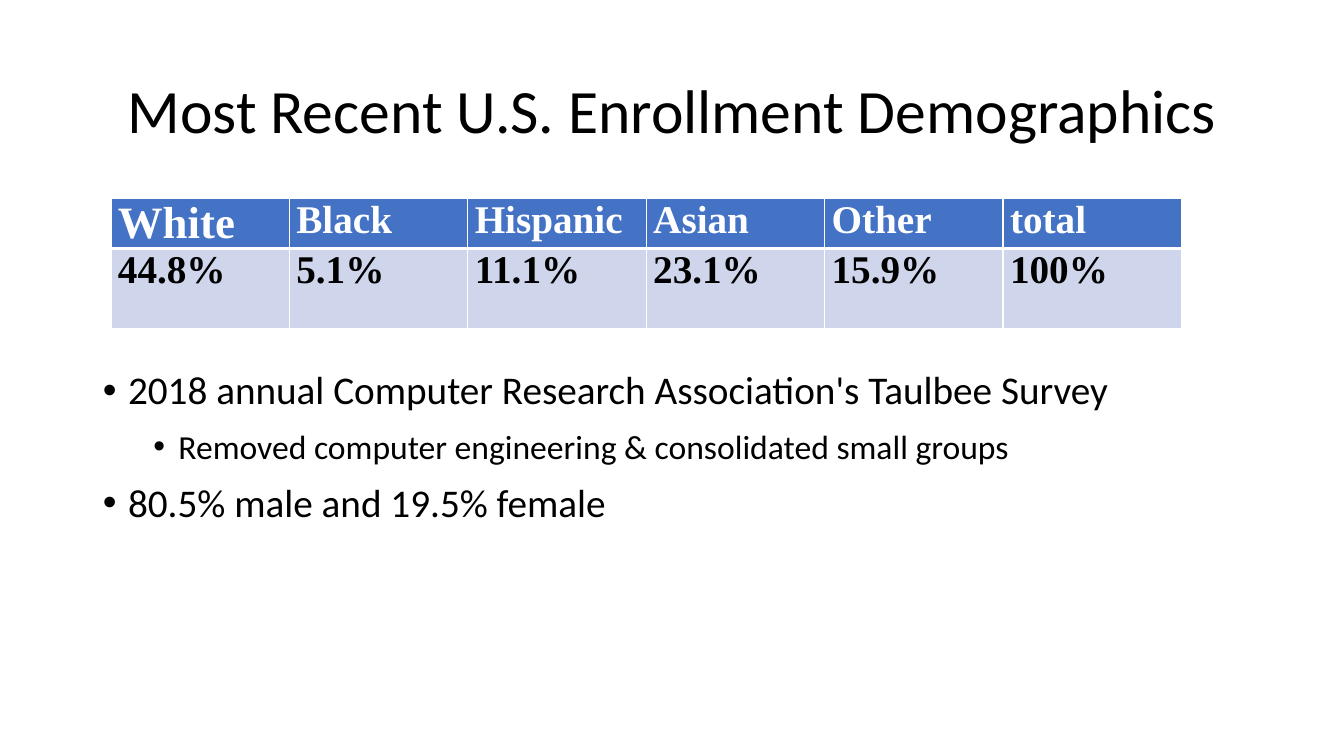
import pptx
import pptx.dml.color
import pptx.enum.text
import pptx.oxml.ns
import pptx.util
from lxml import etree

PX = 9144  # EMU per px, 100 px to the inch
BLACK = pptx.dml.color.RGBColor(0x00, 0x00, 0x00)
WHITE = pptx.dml.color.RGBColor(0xFF, 0xFF, 0xFF)
HEADER_BLUE = pptx.dml.color.RGBColor(0x44, 0x72, 0xC4)
PALE_BLUE = pptx.dml.color.RGBColor(0xCF, 0xD5, 0xEA)

HEADING = "Most Recent U.S. Enrollment Demographics"
SHARES = [("White", "44.8%"), ("Black", "5.1%"), ("Hispanic", "11.1%"),
          ("Asian", "23.1%"), ("Other", "15.9%"), ("total", "100%")]
FINDINGS = [
    (0, "2018 annual Computer Research Association's Taulbee Survey"),
    (1, "Removed computer engineering & consolidated small groups"),
    (0, "80.5% male and 19.5% female"),
]
LEVELS = [{"size": 28, "indent": 25}, {"size": 24, "indent": 75}]


def px(length):
    return pptx.util.Emu(length * PX)


def place(placeholder, **box):
    for side, length in box.items():
        setattr(placeholder, side, px(length))


def write(paragraph, text, size, color, name="Calibri", bold=False):
    run = paragraph.add_run()
    run.text = text
    run.font.color.rgb = color
    formats = {"size": pptx.util.Pt(size), "name": name, "bold": bold}
    for key, value in formats.items():
        setattr(run.font, key, value)


def add_heading(slide):
    heading = slide.shapes.title
    place(heading, left=92, top=40, width=1150, height=145)
    frame = heading.text_frame
    frame.auto_size = pptx.enum.text.MSO_AUTO_SIZE.NONE
    frame.vertical_anchor = pptx.enum.text.MSO_ANCHOR.MIDDLE
    line = frame.paragraphs[0]
    line.alignment = pptx.enum.text.PP_ALIGN.CENTER
    line.line_spacing = 0.9
    write(line, HEADING, 44, BLACK)


def add_findings(slide):
    findings = slide.placeholders[1]
    place(findings, left=92, top=185, width=1150, height=476)
    frame = findings.text_frame
    frame.auto_size = pptx.enum.text.MSO_AUTO_SIZE.NONE
    frame.margin_top = px(183)  # text starts below the table
    for index, (level, text) in enumerate(FINDINGS):
        item = frame.add_paragraph() if index else frame.paragraphs[0]
        item.level = level
        item.line_spacing = 0.9
        item.space_before = pptx.util.Pt(12 if index else 0)
        properties = item._p.get_or_add_pPr()
        properties.set("marL", str(px(LEVELS[level]["indent"])))
        properties.set("indent", str(-px(25)))
        for tag, key, value in (("a:buFont", "typeface", "Arial"), ("a:buChar", "char", "•")):
            etree.SubElement(properties, pptx.oxml.ns.qn(tag)).set(key, value)
        write(item, text, LEVELS[level]["size"], BLACK)


def add_borders(cell, **widths):
    properties = cell._tc.get_or_add_tcPr()
    for side in "LRTB":
        width = pptx.util.Pt(widths.get(side, 1))
        line = etree.SubElement(properties, pptx.oxml.ns.qn("a:ln" + side), w=str(width))
        fill = etree.SubElement(line, pptx.oxml.ns.qn("a:solidFill"))
        etree.SubElement(fill, pptx.oxml.ns.qn("a:srgbClr"), val=str(WHITE))


def fill_cell(cell, text, size, color, background):
    margins = {"margin_left": 7, "margin_right": 7, "margin_top": 0, "margin_bottom": 0}
    for margin, length in margins.items():
        setattr(cell, margin, px(length))
    cell.fill.solid()
    cell.fill.fore_color.rgb = background
    line = cell.text_frame.paragraphs[0]
    line.alignment = pptx.enum.text.PP_ALIGN.JUSTIFY
    write(line, text, size, color, "Times New Roman", True)


def add_shares(slide):
    frame = slide.shapes.add_table(2, len(SHARES), px(110), px(197), px(1062), px(129))
    shares = frame.table
    for row, height in zip(shares.rows, (49, 80)):
        row.height = px(height)
    for column, (group, share) in enumerate(SHARES):
        shares.columns[column].width = px(177)
        header, value = shares.cell(0, column), shares.cell(1, column)
        add_borders(header, B=3)
        add_borders(value, T=3)
        fill_cell(header, group, 28 if column else 32, WHITE, HEADER_BLUE)
        fill_cell(value, share, 28, BLACK, PALE_BLUE)


def main():
    deck = pptx.Presentation()
    deck.slide_width, deck.slide_height = px(1333), px(750)
    slide = deck.slides.add_slide(deck.slide_layouts[1])
    add_heading(slide)
    add_findings(slide)
    add_shares(slide)
    deck.save("out.pptx")


if __name__ == "__main__":
    main()
